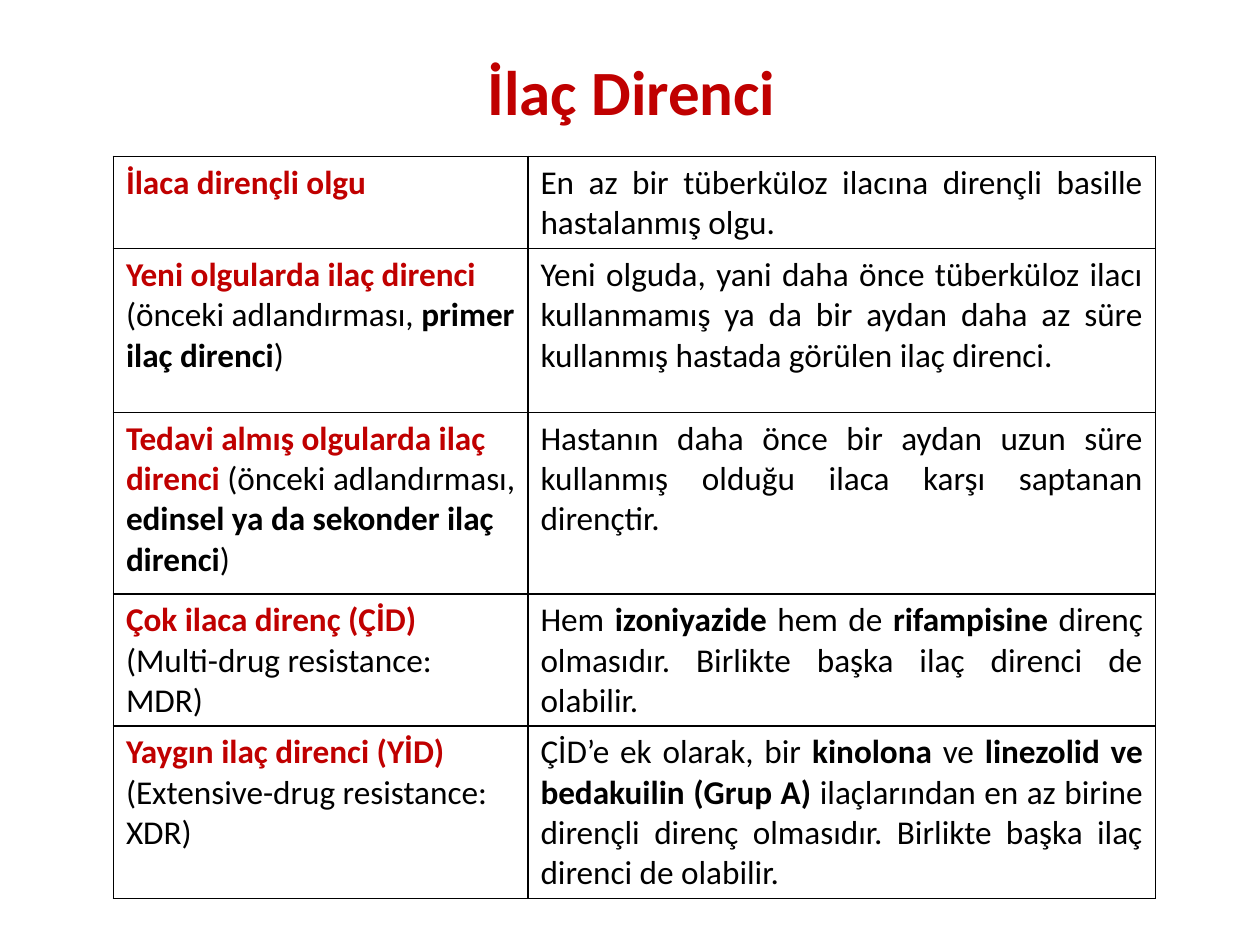
from dataclasses import dataclass

from lxml import etree
from pptx import Presentation
from pptx import util as u
from pptx.dml.color import RGBColor
from pptx.enum import text
from pptx.oxml import ns

RED = RGBColor(0xC0, 0x00, 0x00)
BLACK = RGBColor(0x00, 0x00, 0x00)
FONT = "Calibri"
BODY_SIZE = 19
COLUMN_WIDTHS = (3.29, 4.98)


@dataclass
class Span:
    wording: str
    bold: bool = False
    color: RGBColor = BLACK
    size: float = BODY_SIZE


@dataclass
class Definition:
    height: float
    term: list[Span]
    meaning: list[Span]


def heading(wording: str, size: float = BODY_SIZE) -> Span:
    return Span(wording, True, RED, size)


def strong(wording: str) -> Span:
    return Span(wording, True)


DEFINITIONS = [
    Definition(
        0.7,
        [heading("İlaca dirençli olgu")],
        [Span("En az bir tüberküloz ilacına dirençli basille hastalanmış olgu.")],
    ),
    Definition(
        1.3,
        [heading("Yeni olgularda ilaç direnci "), Span("(önceki adlandırması, "),
         strong("primer ilaç direnci"), Span(")")],
        [Span("Yeni olguda, yani daha önce tüberküloz ilacı kullanmamış ya da bir "
              "aydan daha az süre kullanmış hastada görülen ilaç direnci.")],
    ),
    Definition(
        1.44,
        [heading("Tedavi almış olgularda ilaç direnci "), Span("(önceki adlandırması, "),
         strong("edinsel ya da sekonder ilaç direnci"), Span(")")],
        [Span("Hastanın daha önce bir aydan uzun süre kullanmış olduğu ilaca karşı "
              "saptanan dirençtir.")],
    ),
    Definition(
        1,
        [heading("Çok ilaca direnç (ÇİD) "), Span("(Multi-drug resistance: MDR)")],
        [Span("Hem "), strong("izoniyazide"), Span(" hem de "), strong("rifampisine "),
         Span("direnç olmasıdır. Birlikte başka ilaç direnci de olabilir.")],
    ),
    Definition(
        1.3,
        [heading("Yaygın ilaç direnci (YİD) "), Span("(Extensive-drug resistance: XDR)")],
        [Span("ÇİD’e ek olarak, bir "), strong("kinolona"), Span(" ve "),
         strong("linezolid ve bedakuilin (Grup A)"),
         Span(" ilaçlarından en az birine dirençli direnç olmasıdır. "
              "Birlikte başka ilaç direnci de olabilir. ")],
    ),
]


def write(para, spans: list[Span], alignment) -> None:
    para.alignment = alignment
    for span in spans:
        run = para.add_run()
        run.text = span.wording
        run.font.name = FONT
        run.font.size = u.Pt(span.size)
        run.font.bold = span.bold
        run.font.color.rgb = span.color


def add_borders(cell) -> None:
    """Draw a thin line on all four sides; borders come before the fill."""
    properties = cell._tc.get_or_add_tcPr()
    for index, side in enumerate(("lnL", "lnR", "lnT", "lnB")):
        line = etree.Element(ns.qn(f"a:{side}"), w=str(u.Pt(1)))
        fill = etree.SubElement(line, ns.qn("a:solidFill"))
        etree.SubElement(fill, ns.qn("a:srgbClr"), val=str(BLACK))
        properties.insert(index, line)


def fill_cell(cell, spans: list[Span], alignment) -> None:
    cell.fill.background()
    add_borders(cell)
    write(cell.text_frame.paragraphs[0], spans, alignment)


def add_title(page) -> None:
    box = page.shapes.add_textbox(
        u.Inches(1.53), u.Inches(0.37), u.Inches(7.08), u.Inches(0.7))
    box.text_frame.word_wrap = True
    write(box.text_frame.paragraphs[0], [heading("İlaç Direnci ", 36)],
          text.PP_ALIGN.CENTER)


def add_definitions(page) -> None:
    table = page.shapes.add_table(
        len(DEFINITIONS), len(COLUMN_WIDTHS), u.Inches(0.9), u.Inches(1.24),
        u.Inches(sum(COLUMN_WIDTHS)),
        u.Inches(sum(item.height for item in DEFINITIONS))).table
    table.first_row = False
    table.horz_banding = False
    for column, width in zip(table.columns, COLUMN_WIDTHS):
        column.width = u.Inches(width)
    for row, item in zip(table.rows, DEFINITIONS):
        row.height = u.Inches(item.height)
        fill_cell(row.cells[0], item.term, text.PP_ALIGN.LEFT)
        fill_cell(row.cells[1], item.meaning, text.PP_ALIGN.JUSTIFY)


def main() -> None:
    deck = Presentation()
    deck.slide_width, deck.slide_height = u.Inches(10), u.Inches(7.5)
    page = deck.slides.add_slide(deck.slide_layouts[6])
    add_title(page)
    add_definitions(page)
    deck.save("out.pptx")


if __name__ == "__main__":
    main()
